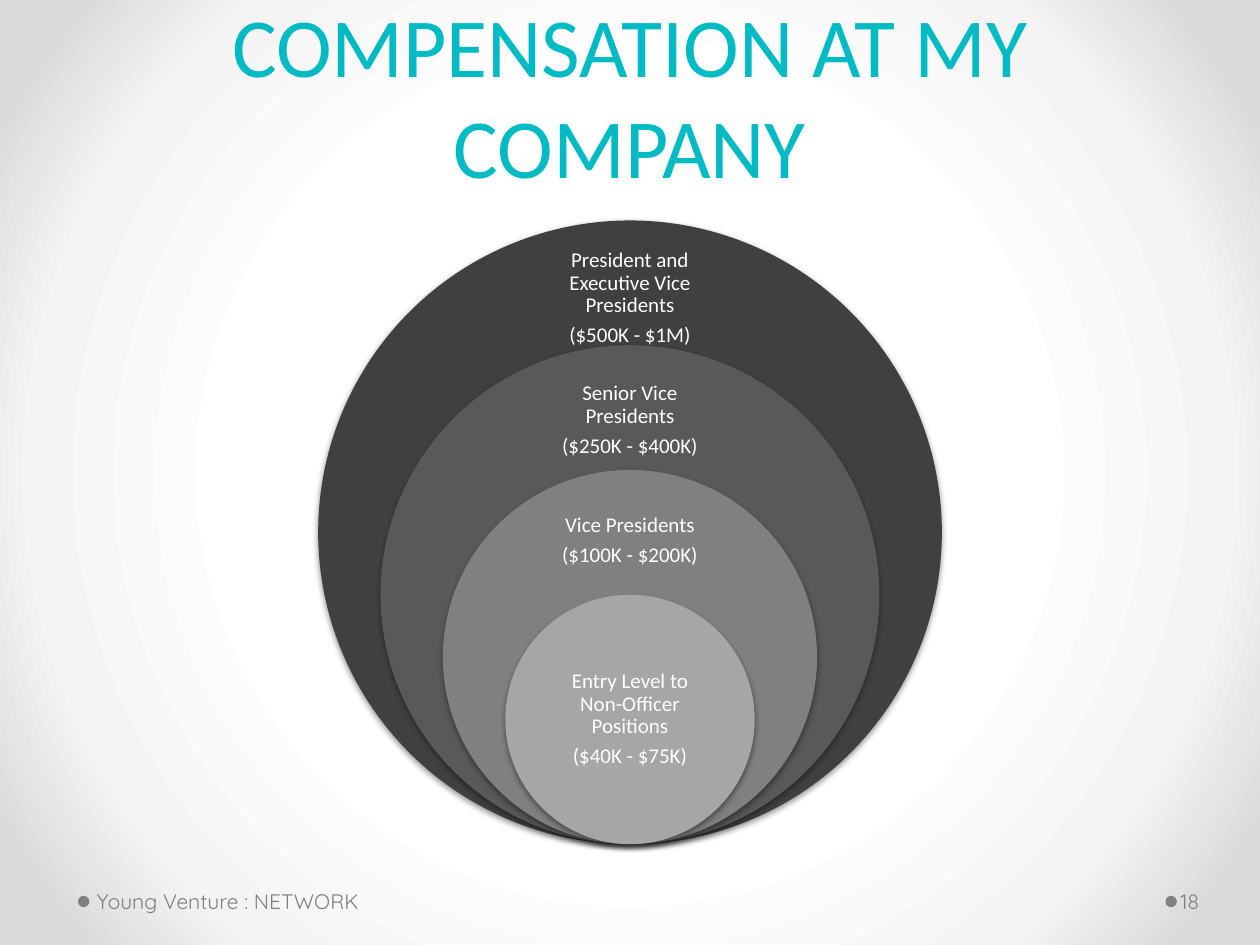
from pptx import Presentation
from pptx.dml.color import RGBColor
from pptx.enum.shapes import MSO_SHAPE as Preset
from pptx.enum.text import MSO_ANCHOR as Anchor, PP_ALIGN as Align
from pptx.oxml import parse_xml
from pptx.oxml.ns import nsdecls
from pptx.util import Pt

WIDTH, HEIGHT = 720, 540
BOTTOM, OUTER = 482.4, 356.4
STOPS = [(50, "FFFFFF"), (76, "F4F4F4"), (92, "DADADA")]
# fill, middle of the label, job title, pay range
LEVELS = [
    ("404040", 170.6, "President and Executive Vice Presidents", "($500K - $1M)"),
    ("595959", 240.1, "Senior Vice Presidents", "($250K - $400K)"),
    ("808080", 308.9, "Vice Presidents", "($100K - $200K)"),
    ("A6A6A6", 411.1, "Entry Level to Non-Officer Positions", "($40K - $75K)"),
]


def color(code):
    return RGBColor.from_string(code)


class Painter:
    teal, gray, white = "00BAC4", "808080", "FFFFFF"
    body, footer = "Calibri", "Quicksand"

    def __init__(self, page):
        self.page = page

    def background(self, stops):
        """Fill the page with a gradient that spreads from its centre."""
        marks = "".join(
            f'<a:gs pos="{place * 1000}"><a:srgbClr val="{code}"/></a:gs>'
            for place, code in stops)
        self.page.element.cSld.insert(0, parse_xml(
            f'<p:bg {nsdecls("p", "a")}><p:bgPr><a:gradFill rotWithShape="1">'
            f'<a:gsLst>{marks}</a:gsLst><a:path path="circle">'
            '<a:fillToRect l="50000" t="50000" r="50000" b="50000"/></a:path>'
            '</a:gradFill><a:effectLst/></p:bgPr></p:bg>'))

    def circle(self, left, top, size, fill, shadow=False):
        disc = self.page.shapes.add_shape(
            Preset.OVAL, Pt(left), Pt(top), Pt(size), Pt(size))
        disc.shadow.inherit = False
        disc.fill.solid()
        disc.fill.fore_color.rgb = color(fill)
        disc.line.fill.background()
        if shadow:
            effects = disc.element.spPr.find("{*}effectLst")
            effects.append(parse_xml(
                f'<a:outerShdw {nsdecls("a")} blurRad="{Pt(3.1)}" dist="{Pt(1.6)}" '
                'dir="5400000" rotWithShape="0"><a:srgbClr val="000000">'
                '<a:alpha val="38000"/></a:srgbClr></a:outerShdw>'))

    def text(self, left, top, width, height, lines, size, font, ink,
             align=Align.LEFT, anchor=Anchor.MIDDLE, inset=0, spacing=1, after=0):
        box = self.page.shapes.add_textbox(Pt(left), Pt(top), Pt(width), Pt(height))
        frame = box.text_frame
        frame.word_wrap = True
        frame.vertical_anchor = anchor
        frame.margin_left = frame.margin_right = Pt(inset)
        frame.margin_top = frame.margin_bottom = Pt(3.6)
        frame.text = "\n".join(lines)
        for para in frame.paragraphs:
            para.alignment = align
            para.line_spacing = spacing
            para.space_after = Pt(after)
            para.font.size = Pt(size)
            para.font.name = font
            para.font.color.rgb = color(ink)

    def footnote(self, dot_left, text_left, width, words):
        self.circle(dot_left, 511.9, 6.5, self.gray)
        self.text(text_left, 500.4, width, 28.8, [words], 12, self.footer, self.gray)

    def level(self, size, fill, middle, lines):
        self.circle((WIDTH - size) / 2, BOTTOM - size, size, fill, shadow=True)
        width, height = 86.4, 58
        self.text((WIDTH - width) / 2, middle - height / 2, width, height, lines,
                  12, self.body, self.white, Align.CENTER, spacing=0.9, after=4.2)


def main():
    deck = Presentation()
    deck.slide_width, deck.slide_height = Pt(WIDTH), Pt(HEIGHT)
    painter = Painter(deck.slides.add_slide(deck.slide_layouts[6]))
    painter.background(STOPS)
    painter.text(36, 10.8, 648, 104.4, ["COMPENSATION AT MY COMPANY"], 48,
                 painter.body, painter.teal, Align.CENTER, Anchor.BOTTOM,
                 inset=7.2, spacing=Pt(58))
    for step, (fill, middle, *lines) in enumerate(LEVELS):
        painter.level(OUTER * (1 - step / 5), fill, middle, lines)
    painter.footnote(44.6, 55.4, 220, "Young Venture : NETWORK")
    painter.footnote(666, 674.6, 41, "18")
    deck.save("out.pptx")


if __name__ == "__main__":
    main()
